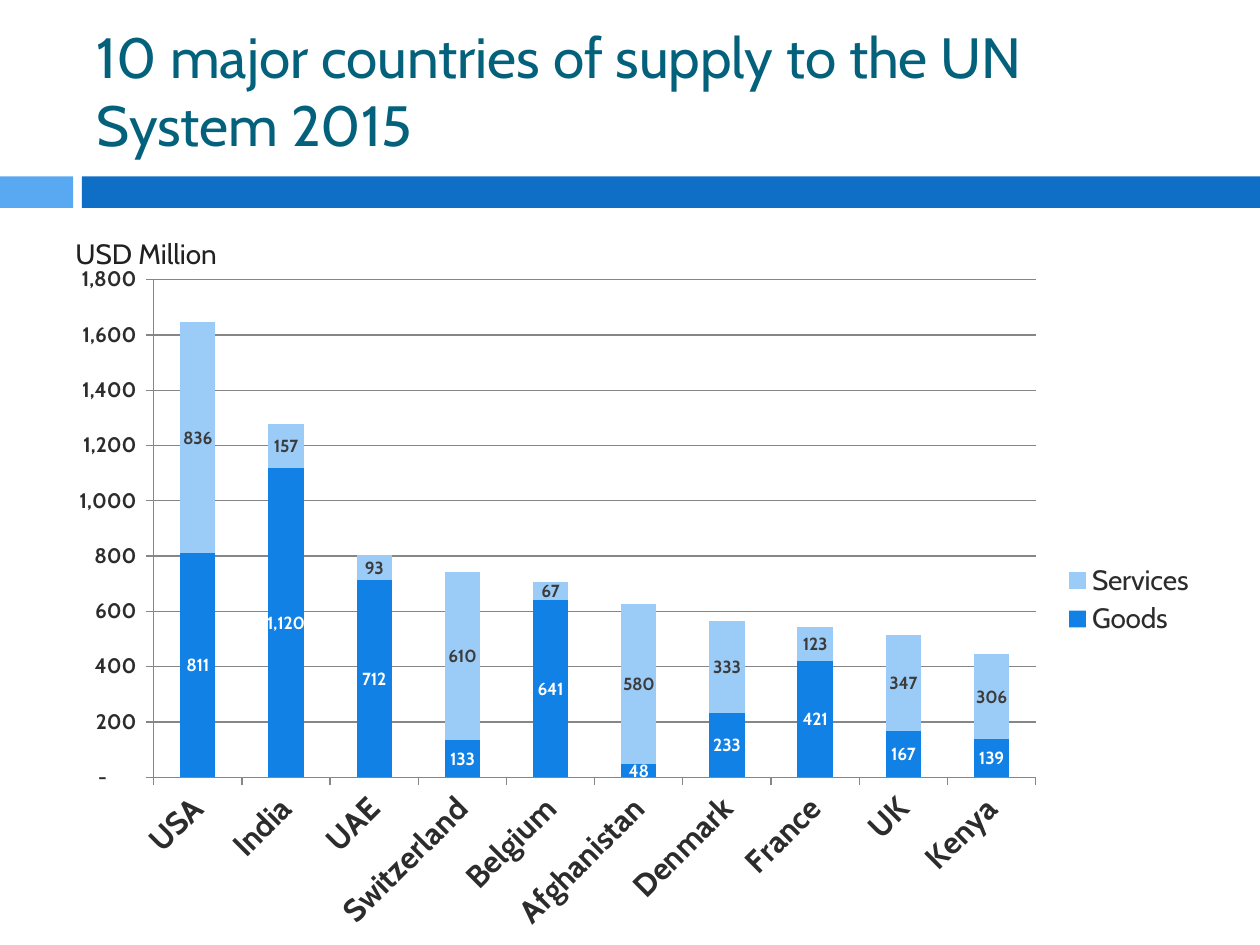
from lxml import etree
from pptx import Presentation
from pptx import util as u
from pptx.chart import data as chart_data
from pptx.dml.color import RGBColor
from pptx.enum import chart as charts, shapes, text
from pptx.oxml import parse_xml
from pptx.oxml.ns import nsdecls, qn

FONT = "Cabin"
NUMBER_FORMAT = '_(* #,##0_);_(* \\(#,##0\\);_(* "-"??_);_('
COUNTRIES = ["USA", "India", "UAE", "Switzerland", "Belgium",
             "Afghanistan", "Denmark", "France", "UK", "Kenya"]
# name, values, bar colour, label colour
SERIES = [
    ("Goods", [811, 1120, 712, 133, 641, 48, 233, 421, 167, 139], "1281E6", "FFFFFF"),
    ("Services", [836, 157, 93, 610, 67, 580, 333, 123, 347, 306], "9BCBF7", "3B3B3B"),
]


def color(value):
    return RGBColor.from_string(value)


def box(*lengths):
    return [u.Inches(length) for length in lengths]


class SlideBuilder:
    def __init__(self, slide):
        self.slide = slide

    def style(self, font, size, fill, bold=False):
        font.name = FONT
        font.size = u.Pt(size)
        font.bold = bold
        font.color.rgb = color(fill)

    def bar(self, place, fill):
        shape = self.slide.shapes.add_shape(shapes.MSO_SHAPE.RECTANGLE, *box(*place))
        shape.shadow.inherit = False
        shape.fill.solid()
        shape.fill.fore_color.rgb = color(fill)
        shape.line.fill.background()

    def text(self, place, words, size, fill, anchor=text.MSO_ANCHOR.TOP):
        frame = self.slide.shapes.add_textbox(*box(*place)).text_frame
        frame.word_wrap = True
        frame.vertical_anchor = anchor
        paragraph = frame.paragraphs[0]
        paragraph.text = words
        self.style(paragraph.font, size, fill)

    def axis(self, axis, size):
        axis.major_tick_mark = charts.XL_TICK_MARK.OUTSIDE
        axis.minor_tick_mark = charts.XL_TICK_MARK.NONE
        self.line(axis.format.line)
        self.style(axis.tick_labels.font, size, "2C2C2C", True)

    def line(self, line):
        line.color.rgb = color("868686")
        line.width = u.Pt(0.75)

    def stacked_chart(self, place, categories, series_rows, plot_area):
        data = chart_data.CategoryChartData(number_format=NUMBER_FORMAT)
        data.categories = categories
        for name, values, _, _ in series_rows:
            data.add_series(name, values)
        chart = self.slide.shapes.add_chart(
            charts.XL_CHART_TYPE.COLUMN_STACKED, *box(*place), data).chart
        chart.has_title = False
        self.style(chart.font, 18, "2C2C2C")

        # Axes
        self.axis(chart.category_axis, 18)
        body = chart.category_axis._element.find(qn("c:txPr")).find(qn("a:bodyPr"))
        body.set("rot", "-2700000")
        value_axis = chart.value_axis
        self.axis(value_axis, 12)
        value_axis.minimum_scale, value_axis.maximum_scale = 0, 1800
        value_axis.major_unit = 200
        value_axis.tick_labels.number_format = NUMBER_FORMAT
        value_axis.tick_labels.number_format_is_linked = False
        self.line(value_axis.major_gridlines.format.line)

        # Legend
        chart.has_legend = True
        chart.legend.position = charts.XL_LEGEND_POSITION.RIGHT
        chart.legend.include_in_layout = False
        self.style(chart.legend.font, 16, "2C2C2C")

        # Series and labels
        plot = chart.plots[0]
        plot.gap_width, plot.overlap = 150, 100
        plot.vary_by_categories = False
        for series, (_, _, fill, label_color) in zip(plot.series, series_rows):
            series.format.fill.solid()
            series.format.fill.fore_color.rgb = color(fill)
            labels = series.data_labels
            labels.show_value = True
            labels.number_format = NUMBER_FORMAT
            labels.number_format_is_linked = False
            self.style(labels.font, 10, label_color, True)

        # Fixed inner plot area, as fractions of the chart
        layout = parse_xml(f'<c:layout {nsdecls("c")}><c:manualLayout/></c:layout>')
        settings = [("layoutTarget", "inner"), ("xMode", "edge"), ("yMode", "edge")]
        left, top, width, height = place
        x, y, plot_width, plot_height = plot_area
        settings += [("x", (x - left) / width), ("y", (y - top) / height),
                     ("w", plot_width / width), ("h", plot_height / height)]
        for tag, value in settings:
            etree.SubElement(layout[0], qn(f"c:{tag}")).set("val", str(value))
        area = chart._chartSpace.find(qn("c:chart")).find(qn("c:plotArea"))
        for old_layout in area.findall(qn("c:layout")):
            area.remove(old_layout)
        area.insert(0, layout)


def main():
    presentation = Presentation()
    presentation.slide_width, presentation.slide_height = box(10, 7.5)
    builder = SlideBuilder(presentation.slides.add_slide(presentation.slide_layouts[6]))

    # Header
    builder.bar((0, 1.4, 0.58, 0.25), "59A9F2")
    builder.bar((0.65, 1.4, 9.35, 0.25), "0F6FC6")
    builder.text((0.67, 0.17, 8.92, 1.08),
                 "10 major countries of supply to the UN System 2015",
                 32.4, "04617B", text.MSO_ANCHOR.MIDDLE)

    # Chart and its unit
    builder.stacked_chart((0.42, 2.02, 9.17, 5.48), COUNTRIES, SERIES,
                          (1.22, 2.22, 7, 3.95))
    builder.text((0.5, 1.83, 1.75, 0.37), "USD Million", 16, "212121")

    presentation.save("out.pptx")


if __name__ == "__main__":
    main()
